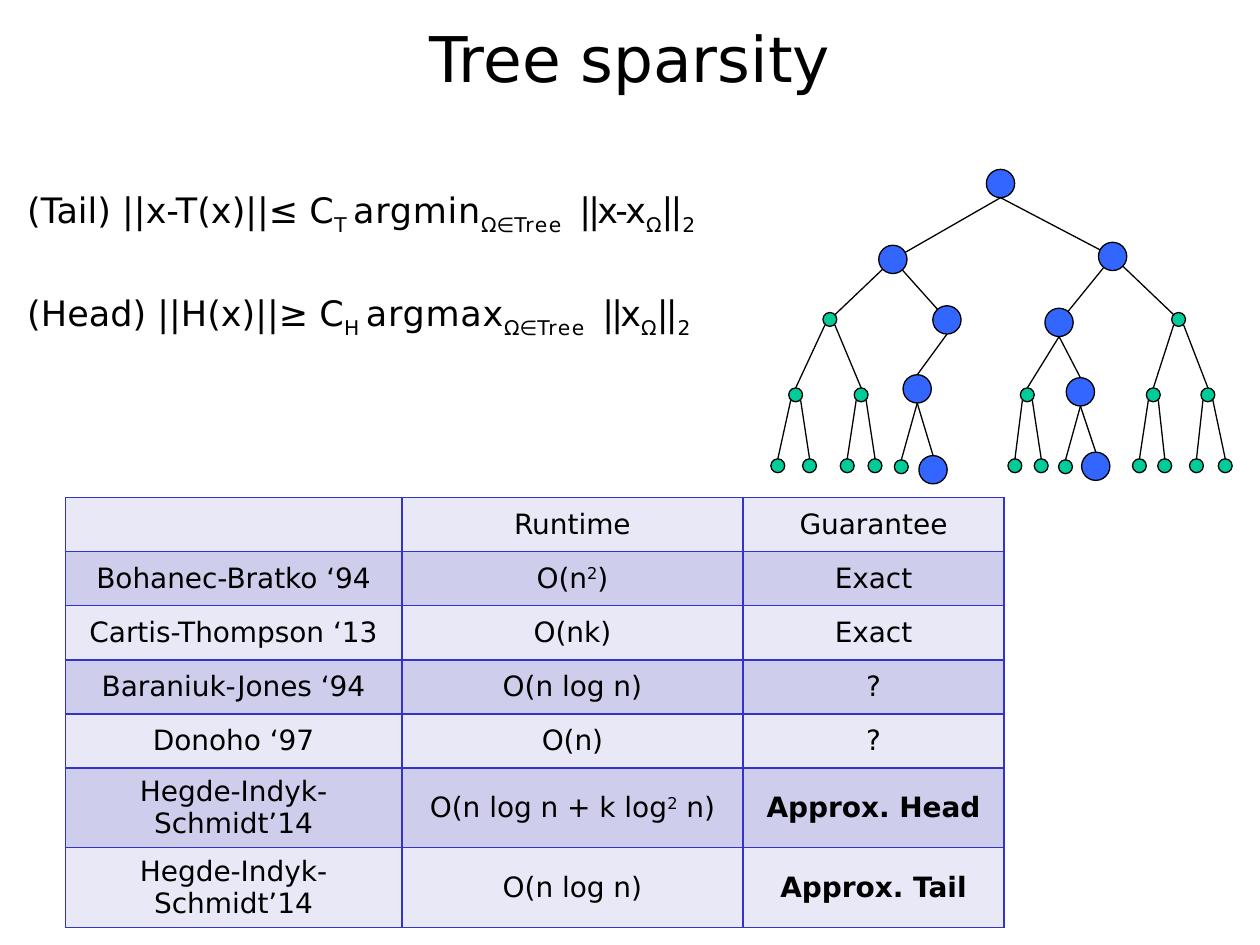
from typing import NamedTuple

from lxml.etree import SubElement
from pptx import Presentation
from pptx.dml.color import RGBColor
from pptx.enum.shapes import MSO_CONNECTOR, MSO_SHAPE
from pptx.enum.text import MSO_ANCHOR, PP_ALIGN
from pptx.oxml.ns import qn
from pptx.util import Cm, Pt

FONT = "DejaVu Sans"
COLORS = {
    "text": "000000",
    "selected": "3366FF",
    "other": "00CC99",
    "border": "3333CC",
    "light": "E8E8F6",
    "dark": "CECEEC",
}
DIAMETERS = {"selected": 0.57, "other": 0.28}


class Node(NamedTuple):
    """A tree node: centre in cm within the tree box, parent index and kind."""

    x: float
    y: float
    parent: int = None
    kind: str = "other"


NODES = [
    Node(4.67, 0.3, None, "selected"),
    Node(2.5, 1.83, 0, "selected"),
    Node(6.93, 1.77, 0, "selected"),
    Node(1.23, 3.04, 1),
    Node(3.59, 3.05, 1, "selected"),
    Node(5.85, 3.1, 2, "selected"),
    Node(8.26, 3.04, 2),
    Node(0.54, 4.56, 3),
    Node(1.86, 4.56, 3),
    Node(2.99, 4.44, 4, "selected"),
    Node(5.21, 4.56, 5),
    Node(6.28, 4.5, 5, "selected"),
    Node(7.75, 4.56, 6),
    Node(8.85, 4.56, 6),
    Node(0.18, 5.99, 7),
    Node(0.82, 5.99, 7),
    Node(1.58, 5.99, 8),
    Node(2.14, 5.99, 8),
    Node(2.67, 6.01, 9),
    Node(3.31, 6.07, 9, "selected"),
    Node(4.96, 5.99, 10),
    Node(5.49, 5.99, 10),
    Node(5.98, 6.01, 11),
    Node(6.59, 6, 11, "selected"),
    Node(7.47, 5.99, 12),
    Node(7.98, 5.99, 12),
    Node(8.62, 5.99, 13),
    Node(9.2, 5.99, 13),
]

SUPERSCRIPT = {"baseline": 30}
ROWS = [
    ("", "Runtime", "Guarantee"),
    ("Bohanec-Bratko ‘94", [("O(n", {}), ("2", SUPERSCRIPT), (")", {})], "Exact"),
    ("Cartis-Thompson ‘13", "O(nk)", "Exact"),
    ("Baraniuk-Jones ‘94", "O(n log n)", "?"),
    ("Donoho ‘97", "O(n)", "?"),
    ("Hegde-Indyk-Schmidt’14",
     [("O(n log n + k log", {}), ("2", SUPERSCRIPT), (" n)", {})],
     [("Approx. Head", {"bold": True})]),
    ("Hegde-Indyk-Schmidt’14", "O(n log n)", [("Approx. Tail", {"bold": True})]),
]
ROW_HEIGHTS = [1.09] * 5 + [1.56] * 2
COLUMN_WIDTHS = [6.78, 6.88, 5.26]


def add_run(paragraph, text, size=16, bold=False, baseline=0, spacing=0):
    """Append formatted text; baseline is in percent, spacing in points."""
    run = paragraph.add_run()
    run.text = text
    run.font.name = FONT
    run.font.size = Pt(size)
    run.font.bold = bold
    run.font.color.rgb = RGBColor.from_string(COLORS["text"])
    properties = run._r.get_or_add_rPr()
    if baseline:
        properties.set("baseline", str(baseline * 1000))
    if spacing:
        properties.set("spc", str(round(spacing * 100)))


def add_title(slide, text, left, top, width, height):
    """Place and format the title placeholder."""
    title = slide.shapes.title
    title.left, title.top, title.width, title.height = map(Cm, (left, top, width, height))
    title.text_frame.vertical_anchor = MSO_ANCHOR.MIDDLE
    paragraph = title.text_frame.paragraphs[0]
    paragraph.alignment = PP_ALIGN.CENTER
    add_run(paragraph, text, size=36)


def add_bound(paragraph, bound, constant, operator, norm):
    """Write one approximation bound with its subscripts."""
    omega = ("Ω", {"baseline": -25, "spacing": -1.2})
    parts = [
        (bound, {}),
        (constant + " ", {"baseline": -25}),
        (operator, {"spacing": 0.4}),
        omega,
        ("∈", {"baseline": -25, "spacing": -1.6}),
        ("Tree", {"baseline": -25, "spacing": 0.9}),
        (" ", {"baseline": -25, "spacing": 5.5}),
        (norm, {"spacing": -1.6}),
        omega,
        ("||", {"spacing": -1.6}),
        ("2", {"baseline": -25, "spacing": -1.6}),
    ]
    for text, style in parts:
        add_run(paragraph, text, size=20, **style)


def add_bounds(slide, left, top, width, height):
    """Add the text box with the tail and head bounds."""
    frame = slide.shapes.add_textbox(*map(Cm, (left, top, width, height))).text_frame
    frame.word_wrap = True
    tail = frame.paragraphs[0]
    tail.space_before = Pt(4)
    add_bound(tail, "(Tail) ||x-T(x)||≤ C", "T", "argmin", "||x-x")
    head = frame.add_paragraph()
    head.space_before = Pt(31.3)
    add_bound(head, "(Head) ||H(x)||≥ C", "H", "argmax", "||x")


def add_edge(shapes, node, left, top):
    """Draw the line from a node's parent down to the node."""
    parent = NODES[node.parent]
    start_x, start_y = parent.x, parent.y
    if node.parent not in (1, 2):
        start_y += DIAMETERS[parent.kind] / 2
    if parent.kind == "other":
        start_x += 0.1 if node.x > parent.x else -0.1
        start_y -= 0.03
    end_y = node.y if node.parent <= 2 else node.y - DIAMETERS[node.kind] / 2
    edge = shapes.add_connector(
        MSO_CONNECTOR.STRAIGHT,
        Cm(left + start_x), Cm(top + start_y), Cm(left + node.x), Cm(top + end_y))
    edge.line.color.rgb = RGBColor.from_string(COLORS["text"])
    edge.line.width = Pt(0.75)
    SubElement(edge._element.spPr, qn("a:effectLst"))


def add_tree(slide, left, top):
    """Add the binary tree, edges behind nodes, as one group."""
    shapes = slide.shapes.add_group_shape().shapes
    for node in NODES[1:]:
        add_edge(shapes, node, left, top)
    for node in NODES:
        size = DIAMETERS[node.kind]
        circle = shapes.add_shape(
            MSO_SHAPE.OVAL, Cm(left + node.x - size / 2), Cm(top + node.y - size / 2),
            Cm(size), Cm(size))
        circle.shadow.inherit = False
        circle.fill.solid()
        circle.fill.fore_color.rgb = RGBColor.from_string(COLORS[node.kind])
        circle.line.color.rgb = RGBColor.from_string(COLORS["text"])
        circle.line.width = Pt(0.75)


def format_cell(cell, color):
    """Give a cell its borders, fill and vertical anchor."""
    properties = cell._tc.get_or_add_tcPr()
    for side in ("a:lnL", "a:lnR", "a:lnT", "a:lnB"):
        border = SubElement(properties, qn(side), w=str(Pt(1)))
        fill = SubElement(border, qn("a:solidFill"))
        SubElement(fill, qn("a:srgbClr"), val=COLORS["border"])
    cell.fill.solid()
    cell.fill.fore_color.rgb = RGBColor.from_string(COLORS[color])
    cell.vertical_anchor = MSO_ANCHOR.MIDDLE


def add_results(slide, left, top):
    """Add the table of runtimes and guarantees."""
    table = slide.shapes.add_table(
        len(ROWS), len(COLUMN_WIDTHS), Cm(left), Cm(top),
        Cm(sum(COLUMN_WIDTHS)), Cm(sum(ROW_HEIGHTS))).table
    for column, width in zip(table.columns, COLUMN_WIDTHS):
        column.width = Cm(width)
    for index, (row, height, contents) in enumerate(zip(table.rows, ROW_HEIGHTS, ROWS)):
        row.height = Cm(height)
        for cell, content in zip(row.cells, contents):
            format_cell(cell, "dark" if index % 2 else "light")
            paragraph = cell.text_frame.paragraphs[0]
            paragraph.alignment = PP_ALIGN.CENTER
            parts = [(content, {})] if isinstance(content, str) else content
            for text, style in parts:
                if text:
                    add_run(paragraph, text, **style)


def main():
    """Build the slide and save it."""
    presentation = Presentation()
    presentation.slide_width, presentation.slide_height = Cm(25.4), Cm(19.05)
    slide = presentation.slides.add_slide(presentation.slide_layouts[5])
    add_title(slide, "Tree sparsity", 1.9, -0.43, 21.6, 3.18)
    add_bounds(slide, 0.3, 3.68, 16.03, 5.28)
    add_tree(slide, 15.5, 3.4)
    add_results(slide, 1.32, 10.03)
    presentation.save("out.pptx")


if __name__ == "__main__":
    main()
